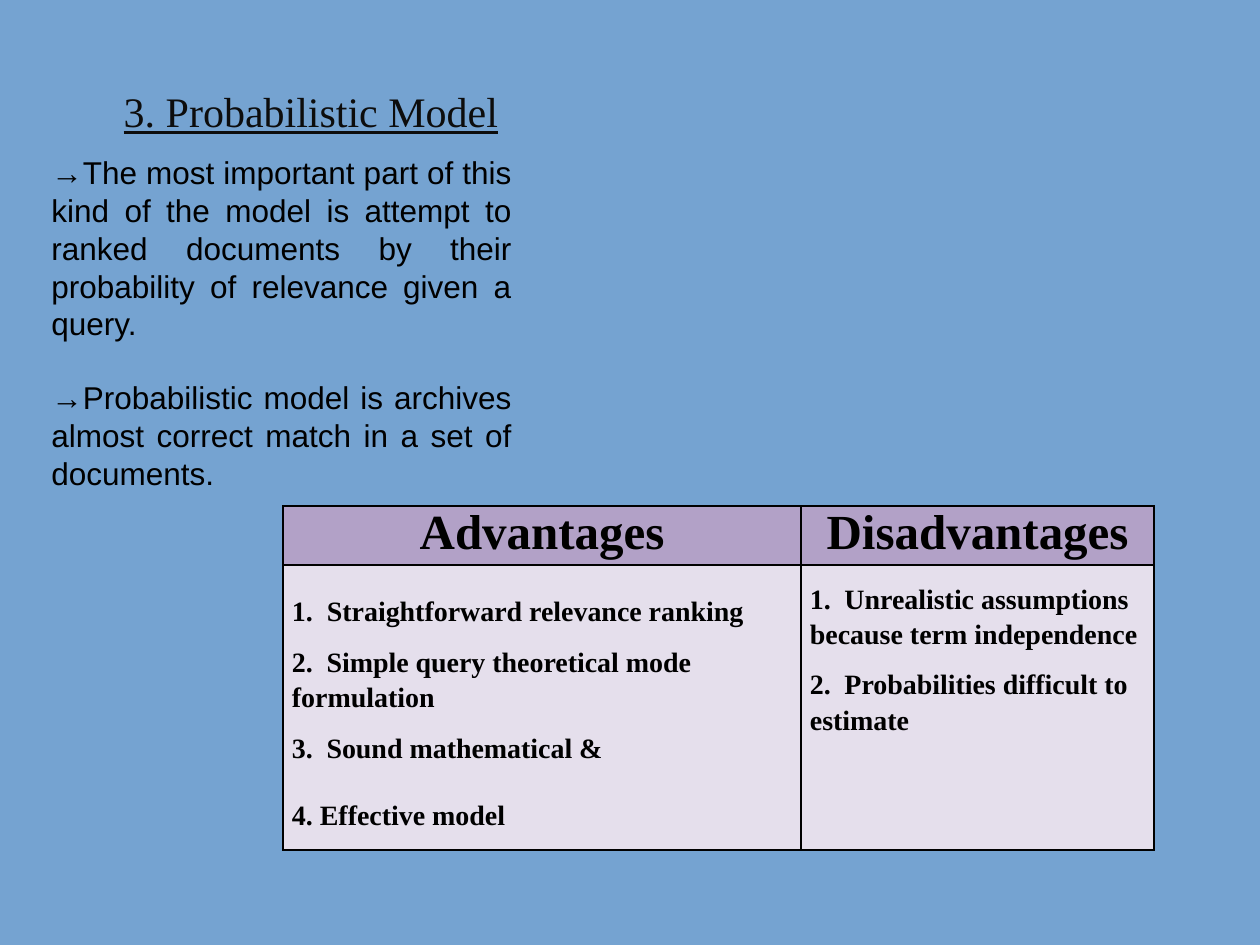
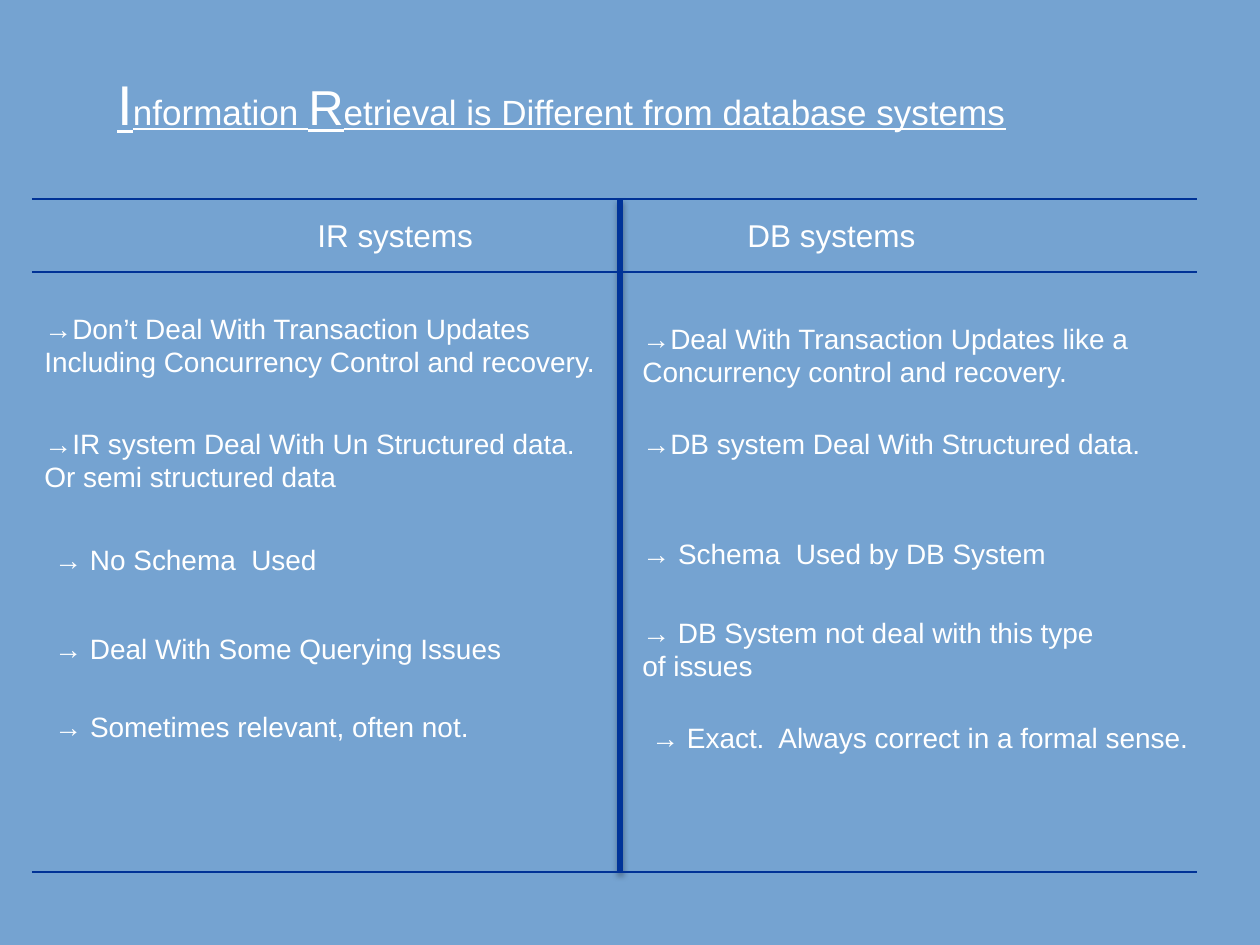
from lxml.etree import SubElement
from pptx import Presentation
from pptx.dml.color import RGBColor
from pptx.enum.shapes import MSO_CONNECTOR
from pptx.enum.text import MSO_ANCHOR, PP_ALIGN
from pptx.oxml import parse_xml
from pptx.oxml.ns import nsdecls, qn
from pptx.util import Pt

PX = 914400 / 126
SLIDE_SIZE = (1260, 945)
COLOURS = {
    "background": "75A3D1", "ink": "000000", "title": "0D0D0D", "white": "FFFFFF",
    "header": "B2A1C7", "cell": "E5DFEC", "divider": "003399", "rule": "003296",
}
SERIF, SANS = "Times New Roman", "Arial"

SERIF_TITLE = {"name": SERIF, "size": 24, "color": "title", "underline": True}
BODY = {"name": SANS, "size": 18, "color": "ink"}
TABLE_HEAD = {"name": SERIF, "size": 28, "color": "ink", "bold": True}
TABLE_ITEM = {**TABLE_HEAD, "size": 16}
TABLE_GAP = {**TABLE_HEAD, "name": SANS}
SANS_TITLE = {"name": SANS, "color": "white", "underline": True}
COLUMN_HEAD = {"name": SANS, "size": 18, "color": "white"}
COLUMN_ITEM = {**COLUMN_HEAD, "size": 16}


def px(length):
    return round(length * PX)


def colour(name):
    return RGBColor.from_string(COLOURS[name])


def add_span(para, text, style):
    span = para.add_run()
    span.text = text
    for key, value in style.items():
        if key == "color":
            span.font.color.rgb = colour(value)
        else:
            setattr(span.font, key, Pt(value) if key == "size" else value)


def write(frame, paragraphs, **layout):
    """Fill a text frame; each paragraph is a list of (text, style) spans."""
    for index, spans in enumerate(paragraphs):
        para = frame.paragraphs[0] if index == 0 else frame.add_paragraph()
        for key, value in layout.items():
            setattr(para, key, value)
        for text, style in spans:
            add_span(para, text, style)


def add_text(page, box, paragraphs, wrap=True, anchor=MSO_ANCHOR.TOP, **layout):
    frame = page.shapes.add_textbox(*map(px, box)).text_frame
    frame.word_wrap = wrap
    frame.vertical_anchor = anchor
    write(frame, paragraphs, **layout)
    return frame


def add_line(page, start, end, name, width, shadow=False):
    line = page.shapes.add_connector(MSO_CONNECTOR.STRAIGHT, *map(px, start + end))
    line.line.color.rgb = colour(name)
    line.line.width = Pt(width)
    effects = SubElement(line._element.spPr, qn("a:effectLst"))
    if shadow:
        effects.append(parse_xml(
            f'<a:outerShdw {nsdecls("a")} blurRad="{Pt(3.1)}" dist="{Pt(1.8)}" dir="5400000">'
            '<a:srgbClr val="000000"><a:alpha val="35000"/></a:srgbClr></a:outerShdw>'))


def format_cell(cell, fill, top=0):
    margins = {"margin_left": 9, "margin_right": 9, "margin_top": top, "margin_bottom": 0}
    for key, value in margins.items():
        setattr(cell, key, px(value))
    properties = cell._tc.get_or_add_tcPr()
    for side in ("lnL", "lnR", "lnT", "lnB"):
        properties.append(parse_xml(
            f'<a:{side} {nsdecls("a")} w="{Pt(1)}"><a:solidFill>'
            f'<a:srgbClr val="{COLOURS["ink"]}"/></a:solidFill></a:{side}>'))
    cell.fill.solid()
    cell.fill.fore_color.rgb = colour(fill)


def numbered(number, text):
    return [(f"{number}.", TABLE_ITEM), (" ", TABLE_GAP), (text, TABLE_ITEM)]


def pros_and_cons_table(page, left, top):
    widths, heights = (518, 353), (59, 285)
    table = page.shapes.add_table(
        2, 2, px(left), px(top), px(sum(widths)), px(sum(heights))).table
    table.horz_banding = False
    for column, width in zip(table.columns, widths):
        column.width = px(width)
    for row, height in zip(table.rows, heights):
        row.height = px(height)

    advantages = [
        [("1.  Straightforward relevance ranking", TABLE_ITEM)],
        numbered(2, "Simple query theoretical mode formulation"),
        numbered(3, "Sound mathematical &"),
        [("4. Effective model", TABLE_ITEM)],
    ]
    disadvantages = [
        numbered(1, "Unrealistic assumptions because term independence"),
        numbered(2, "Probabilities difficult to estimate"),
    ]
    columns = (("Advantages", advantages, 32), ("Disadvantages", disadvantages, 0))
    for index, (heading, items, top_margin) in enumerate(columns):
        head, body = table.cell(0, index), table.cell(1, index)
        format_cell(head, "header")
        write(head.text_frame, [[(heading, TABLE_HEAD)]], alignment=PP_ALIGN.CENTER)
        format_cell(body, "cell", top_margin)
        write(body.text_frame, items)
    table.cell(1, 0).text_frame.paragraphs[-1].space_before = Pt(18.4)


def probabilistic_model(page):
    add_text(page, (34, 53, 554, 116), [[("3. Probabilistic Model", SERIF_TITLE)]],
             anchor=MSO_ANCHOR.MIDDLE, alignment=PP_ALIGN.CENTER)
    points = (
        "→The most important part of this kind of the model is attempt to ranked "
        "documents by their probability of relevance given a query.",
        "→Probabilistic model is archives almost correct match in a set of documents.",
    )
    frame = add_text(page, (39, 147, 485, 394), [[(point, BODY)] for point in points],
                     alignment=PP_ALIGN.JUSTIFY)
    frame.paragraphs[1].space_before = Pt(20.7)
    pros_and_cons_table(page, 283, 506)


def system_column(page, left, top, heading, heading_box, items):
    """Place a heading and its points relative to the column's top left corner."""
    x, y, width, height = heading_box
    add_text(page, (left + x, top + y, width, height), [[(heading, COLUMN_HEAD)]], wrap=False)
    for (x, y, width, height), wrap, *lines in items:
        add_text(page, (left + x, top + y, width, height),
                 [[(line, COLUMN_ITEM)] for line in lines], wrap=wrap)


def system_comparison(page):
    title = (("I", 32), ("nformation ", 20), ("R", 28),
             ("etrieval is Different from database systems", 20))
    add_text(page, (105, 63, 935, 81),
             [[(text, {**SANS_TITLE, "size": size}) for text, size in title]], wrap=False)

    left, right, top, bottom, middle = 32, 1197, 199, 872, 620
    add_line(page, (middle, top), (middle, bottom), "divider", 3, shadow=True)
    for y in (top, top + 73, bottom):
        add_line(page, (left, y), (right, y), "rule", 0.75)

    system_column(page, left, top, "IR systems", (273, 11, 192, 50), (
        ((0, 106, 588, 81), True, "→Don’t Deal With Transaction Updates",
         "Including Concurrency Control and recovery."),
        ((0, 221, 588, 81), True,
         "→IR system Deal With Un Structured data. Or semi structured data"),
        ((10, 337, 388, 47), True, "→ No Schema  Used"),
        ((10, 426, 494, 47), True, "→ Deal With Some Querying Issues"),
        ((10, 504, 445, 47), False, "→ Sometimes relevant, often not."),
    ))
    system_column(page, 630, top, "DB systems", (105, 11, 204, 50), (
        ((0, 116, 524, 81), False, "→Deal With Transaction Updates like a",
         "Concurrency control and recovery."),
        ((0, 221, 588, 47), True, "→DB system Deal With Structured data."),
        ((0, 331, 462, 47), True, "→ Schema  Used by DB System"),
        ((0, 410, 504, 81), True, "→ DB System not deal with this type of issues"),
        ((9, 515, 570, 47), False, "→ Exact.  Always correct in a formal sense."),
    ))


def main():
    deck = Presentation()
    deck.slide_width, deck.slide_height = map(px, SLIDE_SIZE)
    background = deck.slide_master.background.fill
    background.solid()
    background.fore_color.rgb = colour("background")
    for build in (probabilistic_model, system_comparison):
        build(deck.slides.add_slide(deck.slide_layouts[6]))
    deck.save("out.pptx")


if __name__ == "__main__":
    main()
